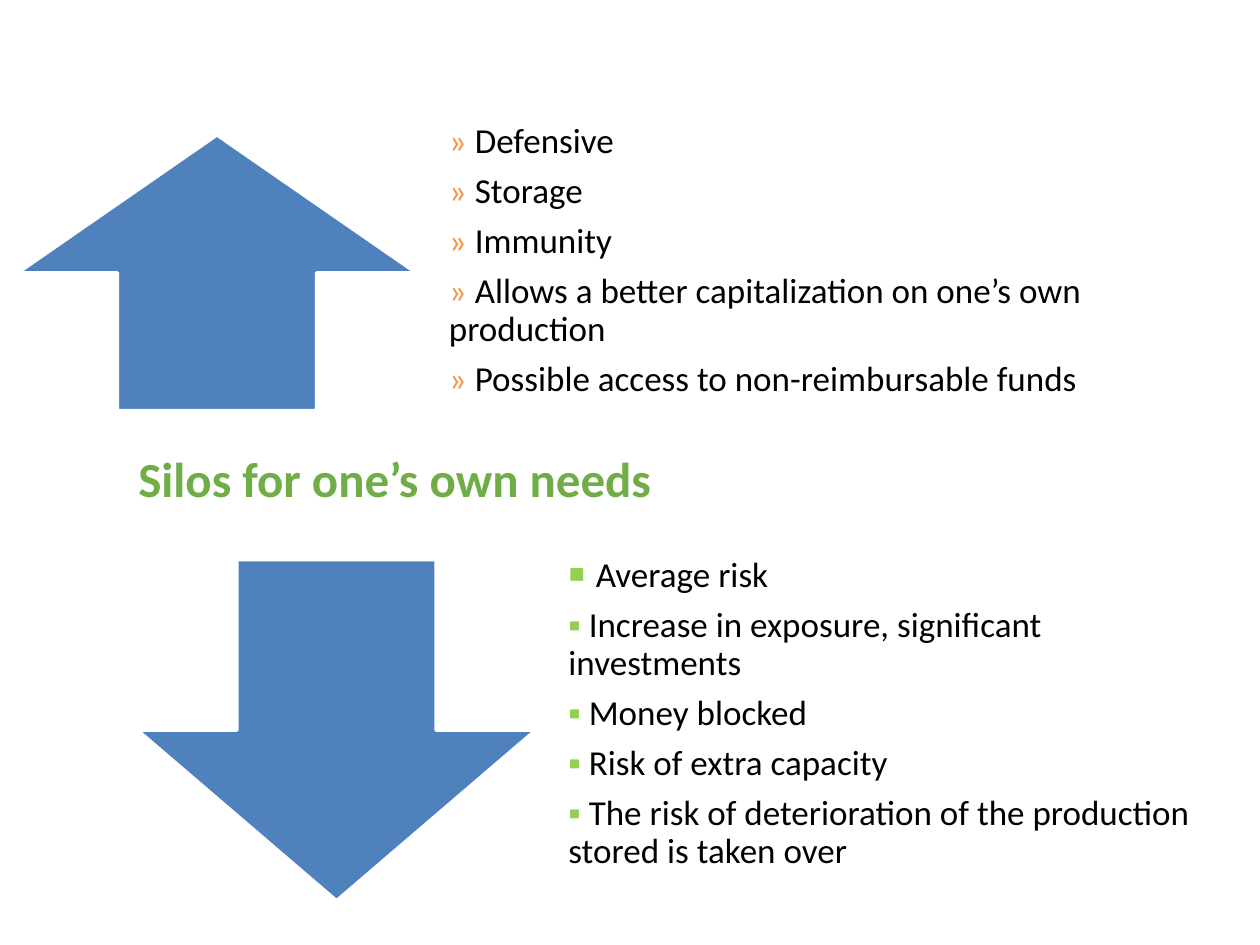
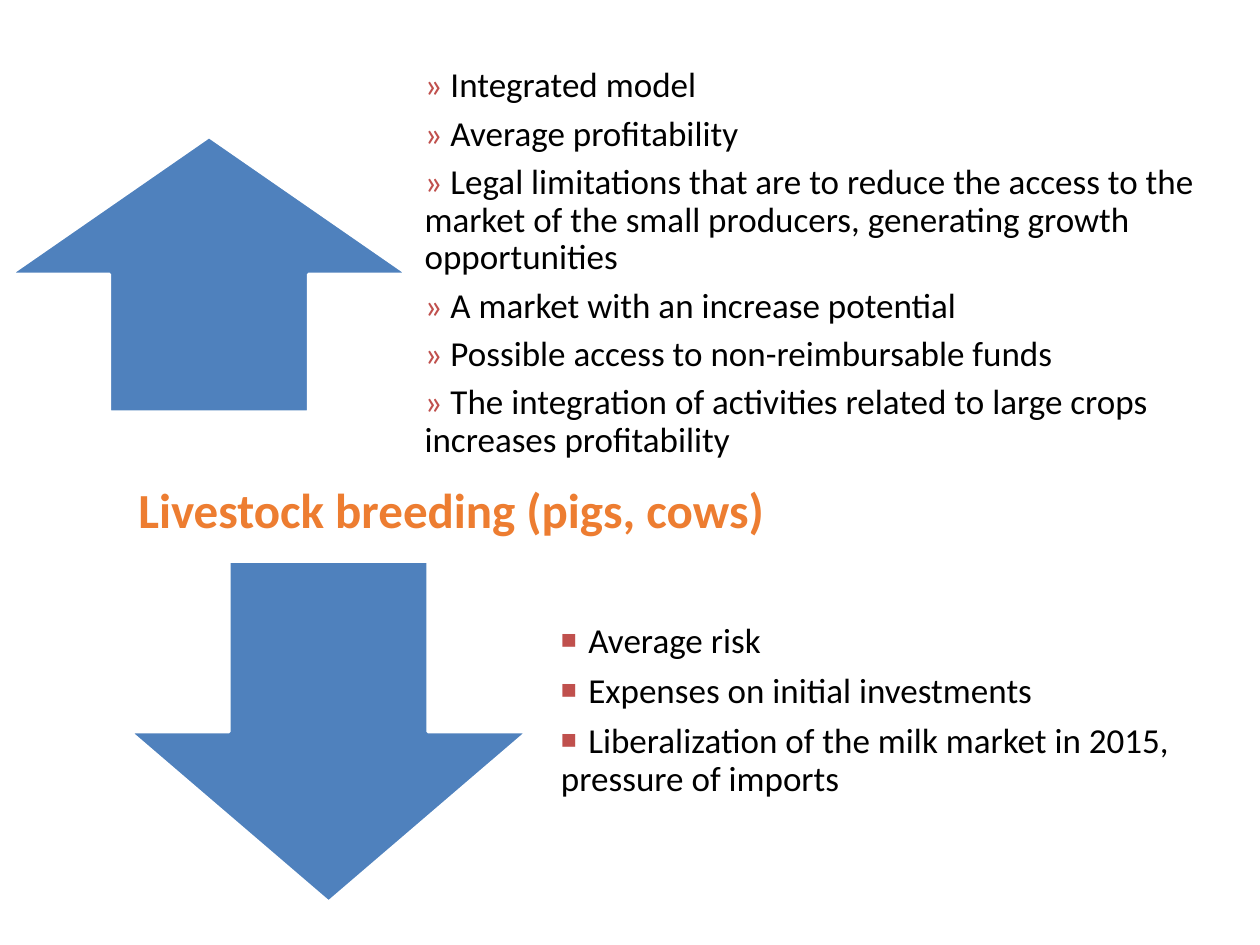
from pptx import Presentation
from pptx import util as u
from pptx.dml import color
from pptx.enum import shapes, text

COLORS = {
    "arrow": "4F81BD", "white": "FFFFFF", "black": "000000",
    "orange": "F79646", "lime": "92D050", "red": "C0504D",
    "green title": "70AD47", "orange title": "ED7D31",
}
BODY_FONT, SQUARE_FONT = "Calibri", "TeX Gyre Schola"
ARROW_WIDTH, UP_HEIGHT, DOWN_HEIGHT = 8.03, 5.56, 6.88
DOWN_SHIFT = (2.41, 8.56)
LIST_HEIGHT = 8.51

SLIDES = [
    {
        "arrow_at": (0.36, 2.72),
        "title": {"words": "Silos for one’s own needs", "top": 8.92, "tint": "green title"},
        "benefits": {
            "at": (8.64, 1.22), "width": 13.64, "mark": "» ", "tint": "orange", "gap": 7,
            "items": ["Defensive", "Storage", "Immunity",
                      "Allows a better capitalization on one’s own production",
                      "Possible access to non-reimbursable funds"],
        },
        "risks": {
            "at": (11.05, 10.34), "width": 13.64, "mark": "▪ ", "tint": "lime", "gap": 7,
            "square_marks": 1,
            "items": ["Average risk", "Increase in exposure, significant investments",
                      "Money blocked", "Risk of extra capacity",
                      "The risk of deterioration of the production stored is taken over"],
        },
    },
    {
        "arrow_at": (0.2, 2.75),
        "title": {"words": "Livestock breeding (pigs, cows)", "top": 9.55, "tint": "orange title"},
        "benefits": {
            "at": (8.15, 1.27), "width": 16.38, "mark": "» ", "tint": "red", "gap": 6,
            "items": ["Integrated model", "Average profitability",
                      "Legal limitations that are to reduce the access to the market of the "
                      "small producers, generating growth opportunities",
                      "A market with an increase potential",
                      "Possible access to non-reimbursable funds",
                      "The integration of activities related to large crops "
                      "increases profitability"],
        },
        "risks": {
            "at": (10.9, 10.29), "width": 13.64, "mark": "▪ ", "tint": "red", "gap": 7,
            "square_marks": 3,
            "items": ["Average risk", "Expenses on initial investments",
                      "Liberalization of the milk market in 2015, pressure of imports"],
        },
    },
]


def rgb(name):
    return color.RGBColor.from_string(COLORS[name])


def apply(target, values):
    """Set each attribute of target named in values."""
    for name, value in values.items():
        setattr(target, name, value)


class Deck:
    def __init__(self):
        self.presentation = Presentation()
        apply(self.presentation, {"slide_width": u.Cm(25.4), "slide_height": u.Cm(19.05)})
        self.slide = None

    def new_slide(self):
        self.slide = self.presentation.slides.add_slide(self.presentation.slide_layouts[6])

    def arrow(self, kind, left, top, height):
        shape = self.slide.shapes.add_shape(
            kind, u.Cm(left), u.Cm(top), u.Cm(ARROW_WIDTH), u.Cm(height))
        shape.shadow.inherit = False
        shape.fill.solid()
        shape.fill.fore_color.rgb = rgb("arrow")
        shape.line.color.rgb = rgb("white")
        shape.line.width = u.Pt(2)

    def frame(self, left, top, width, height, values):
        box = self.slide.shapes.add_textbox(u.Cm(left), u.Cm(top), u.Cm(width), u.Cm(height))
        apply(box.text_frame, {"word_wrap": True, **values})
        return box.text_frame

    def run(self, paragraph, words, tint, size=20, font=BODY_FONT, bold=False):
        run = paragraph.add_run()
        run.text = words
        apply(run.font, {"name": font, "size": u.Pt(size), "bold": bold})
        run.font.color.rgb = rgb(tint)

    def title(self, words, top, tint):
        frame = self.frame(0, top, 25.4, 1.45, {"margin_left": u.Cm(2.79)})
        self.run(frame.paragraphs[0], words, tint, size=28, bold=True)

    def marked_list(self, at, width, mark, tint, gap, items, square_marks=0):
        """Draw a list whose first square_marks marks use the wider square font."""
        inset = u.Cm(0.41)
        frame = self.frame(*at, width, LIST_HEIGHT, {
            "vertical_anchor": text.MSO_ANCHOR.MIDDLE, "margin_left": inset,
            "margin_top": 0, "margin_right": inset, "margin_bottom": inset})
        for index, item in enumerate(items):
            paragraph = frame.add_paragraph() if index else frame.paragraphs[0]
            apply(paragraph, {"line_spacing": 0.9, "space_after": u.Pt(gap)})
            mark_font = SQUARE_FONT if index < square_marks else BODY_FONT
            self.run(paragraph, mark, tint, font=mark_font)
            self.run(paragraph, item, "black")


def main():
    deck = Deck()
    for content in SLIDES:
        deck.new_slide()
        left, top = content["arrow_at"]
        deck.arrow(shapes.MSO_SHAPE.UP_ARROW, left, top, UP_HEIGHT)
        deck.marked_list(**content["benefits"])
        deck.arrow(shapes.MSO_SHAPE.DOWN_ARROW,
                   left + DOWN_SHIFT[0], top + DOWN_SHIFT[1], DOWN_HEIGHT)
        deck.marked_list(**content["risks"])
        deck.title(**content["title"])
    deck.presentation.save("out.pptx")


if __name__ == "__main__":
    main()
